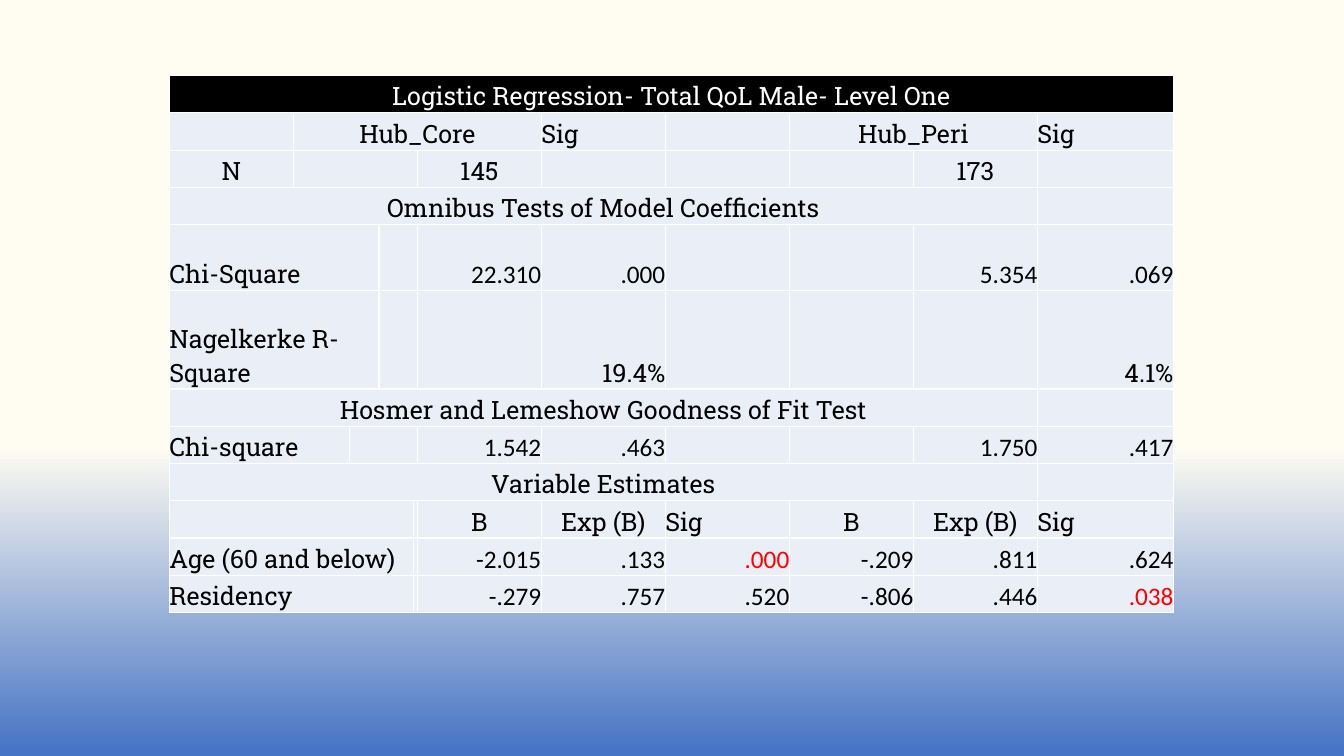
from lxml.etree import SubElement as Sub
from pptx import Presentation as Deck
from pptx.dml.color import RGBColor as Rgb
from pptx.enum.text import MSO_ANCHOR as Anchor, PP_ALIGN as Align
from pptx.oxml.ns import qn
from pptx.util import Inches, Pt

HUES = {"cream": "FFFCF2", "blue": "4472C4", "pale": "EAEFF7",
        "black": "000000", "white": "FFFFFF", "red": "FF0000"}
SLAB, SANS = "Roboto Slab", "Calibri"
UNIT, LINE = 1.23, 0.37
COLS = [UNIT, 0.56, 0.29, 0.34, 0.03] + [UNIT] * 5 + [1.35]
TALL = {4: 0.65, 5: 0.98}
LEFT, TOP = 1.68, 0.75

# Each row lists its texts and how many columns each one spans.
ROWS = [
    (["Logistic Regression- Total QoL Male- Level One"], [11]),
    (["", "Hub_Core", "Sig", "", "Hub_Peri", "Sig"], [1, 5, 1, 1, 2, 1]),
    (["N", "", "145", "", "", "", "173", ""], [1, 4] + [1] * 6),
    (["Omnibus Tests of Model Coefficients", ""], [10, 1]),
    (["Chi-Square", "", "22.310", ".000", "", "", "5.354", ".069"], [3, 2] + [1] * 6),
    (["Nagelkerke R-Square", "", "", "19.4%", "", "", "", "4.1%"], [3, 2] + [1] * 6),
    (["Hosmer and Lemeshow Goodness of Fit Test", ""], [10, 1]),
    (["Chi-square", "", "1.542", ".463", "", "", "1.750", ".417"], [2, 3] + [1] * 6),
    (["Variable Estimates", ""], [10, 1]),
    (["", "", "B", "Exp (B)", "Sig", "B", "Exp (B)", "Sig"], [4] + [1] * 7),
    (["Age (60 and below)", "", "-2.015", ".133", ".000", "-.209", ".811", ".624"],
     [4] + [1] * 7),
    (["Residency", "", "-.279", ".757", ".520", "-.806", ".446", ".038"], [4] + [1] * 7),
]
RED = {(10, 7), (11, 10)}
CELL = {"margin_left": 0, "margin_right": 0, "margin_top": 0, "margin_bottom": 0,
        "vertical_anchor": Anchor.BOTTOM}


def hue(name):
    return Rgb.from_string(HUES[name])


def edge(cell):
    """Draw a white one-point line on all four sides of a cell."""
    props = cell._tc.get_or_add_tcPr()
    for side in ("lnL", "lnR", "lnT", "lnB"):
        line = Sub(props, qn(f"a:{side}"), w=str(Pt(1)))
        Sub(Sub(line, qn("a:solidFill")), qn("a:srgbClr"), val=HUES["white"])


deck = Deck()
deck.slide_width, deck.slide_height = Inches(13.33), Inches(7.5)
slide = deck.slides.add_slide(deck.slide_layouts[6])

back = slide.background.fill
back.gradient()
back.gradient_angle = 270
for stop, (spot, name) in zip(back.gradient_stops, [(0.59, "cream"), (1, "blue")]):
    stop.position = spot
    stop.color.rgb = hue(name)

highs = [TALL.get(r, LINE) for r in range(len(ROWS))]
box = [Inches(n) for n in (LEFT, TOP, sum(COLS), sum(highs))]
table = slide.shapes.add_table(len(ROWS), len(COLS), *box).table
table.first_row = table.horz_banding = False
for col, wide in zip(table.columns, COLS):
    col.width = Inches(wide)
for row, high in zip(table.rows, highs):
    row.height = Inches(high)

for cell in table.iter_cells():
    edge(cell)
    for key, value in CELL.items():
        setattr(cell, key, value)
    cell.fill.solid()
    cell.fill.fore_color.rgb = hue("pale")

for r, (texts, spans) in enumerate(ROWS):
    c = 0
    for text, span in zip(texts, spans):
        cell = table.cell(r, c)
        if span > 1:
            cell.merge(table.cell(r, c + span - 1))
        para = cell.text_frame.paragraphs[0]
        font = para.font
        if text:
            run = para.add_run()
            run.text = text
            font = run.font
        label = c == 0 and 1 < span < 10
        para.alignment = (Align.RIGHT if "." in text else
                          Align.LEFT if label or text == "Sig" else Align.CENTER)
        number = "." in text and "%" not in text
        look = {"size": Pt(18), "bold": False, "name": SANS if number else SLAB}
        for key, value in look.items():
            setattr(font, key, value)
        font.color.rgb = hue("white" if r == 0 else "red" if (r, c) in RED else "black")
        c += span

table.cell(0, 0).fill.fore_color.rgb = hue("black")
deck.save("out.pptx")
